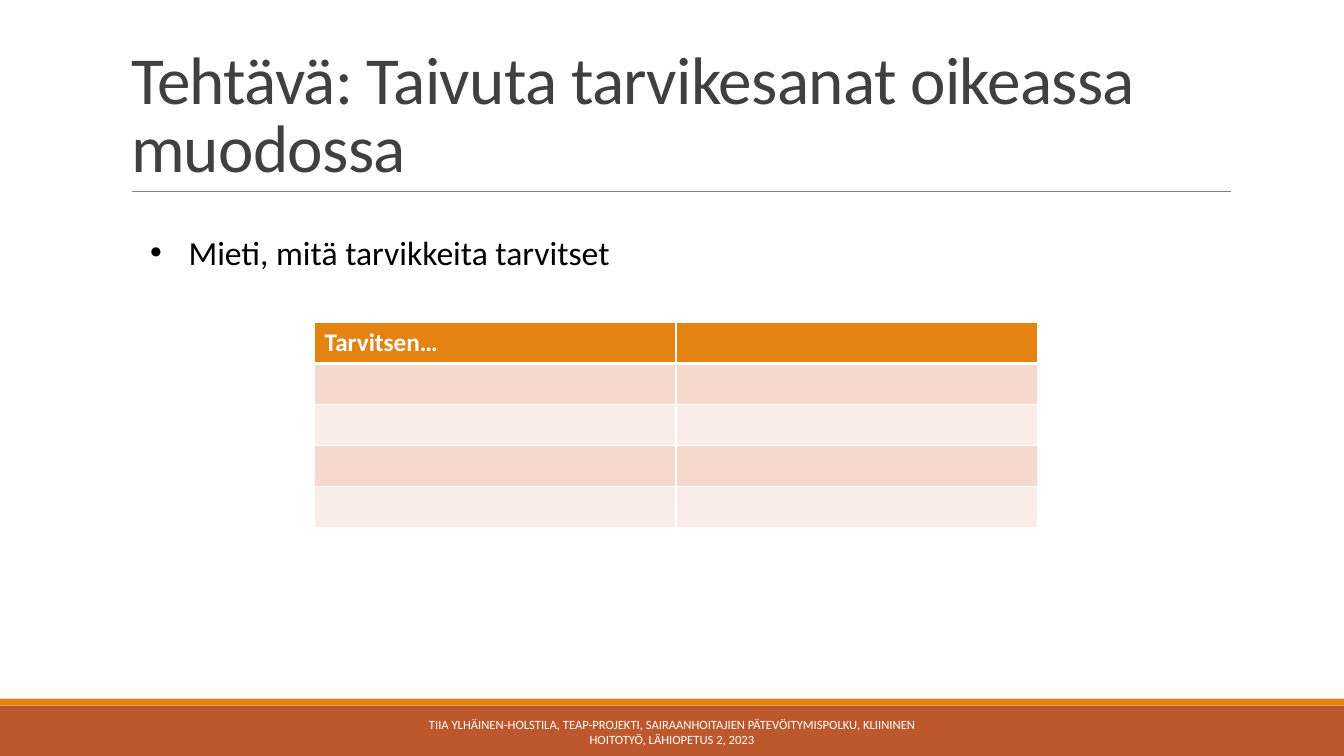
from lxml import etree
from pptx import Presentation
from pptx.dml.color import RGBColor
from pptx.enum import shapes, text
from pptx.oxml import ns
from pptx import util as u

WIDTH, HEIGHT = u.Inches(13.33), u.Inches(7.5)
FONT = "Calibri"
COLORS = {
    "title": "404040",
    "text": "000000",
    "white": "FFFFFF",
    "rule": "808080",
    "accent": "E48312",
    "footer": "BD582C",
    "odd": "F5D9CC",
    "even": "FAEDE7",
}


def rgb(name):
    return RGBColor.from_string(COLORS[name])


def area(x, y, w, h):
    return [int(share * side / 100) for share, side in
            ((x, WIDTH), (y, HEIGHT), (w, WIDTH), (h, HEIGHT))]


def sub(parent, tag, **attrs):
    return etree.SubElement(parent, ns.qn(tag), attrs)


def place(sp, box):
    sp.left, sp.top, sp.width, sp.height = box


def add_run(p, words, size, color, bold=False):
    r = p.add_run()
    r.text = words
    r.font.name = FONT
    r.font.size = u.Pt(size)
    r.font.bold = bold
    r.font.color.rgb = rgb(color)
    return r


def add_bar(s, box, color):
    sp = s.shapes.add_shape(shapes.MSO_SHAPE.RECTANGLE, *box)
    sp.shadow.inherit = False
    sp.fill.solid()
    sp.fill.fore_color.rgb = rgb(color)
    sp.line.fill.background()


def add_rule(s, box):
    x, y, w, h = box
    line = s.shapes.add_connector(shapes.MSO_CONNECTOR.STRAIGHT, x, y, x + w, y + h)
    line.line.color.rgb = rgb("rule")
    line.line.width = u.Pt(0.5)
    sub(line._element.spPr, "a:effectLst")


def fill_title(sp, box, words):
    place(sp, box)
    tf = sp.text_frame
    tf.auto_size = text.MSO_AUTO_SIZE.NONE
    tf.vertical_anchor = text.MSO_ANCHOR.BOTTOM
    p = tf.paragraphs[0]
    p.alignment = text.PP_ALIGN.LEFT
    p.line_spacing = 0.85
    r = add_run(p, words, 48, "title")
    r.font._element.set("spc", "-50")


def fill_list(sp, box, items):
    place(sp, box)
    tf = sp.text_frame
    tf.auto_size = text.MSO_AUTO_SIZE.NONE
    for i, item in enumerate(items):
        p = tf.add_paragraph() if i else tf.paragraphs[0]
        p.space_before, p.space_after = u.Pt(0), u.Pt(12)
        pPr = p._p.get_or_add_pPr()
        indent = u.Inches(0.38)
        pPr.set("marL", str(indent))
        pPr.set("indent", str(-indent))
        sub(pPr, "a:buFont", typeface="Arial")
        sub(pPr, "a:buChar", char="•")
        add_run(p, item, 24, "text")


def add_footer(s, box, words):
    tf = s.shapes.add_textbox(*box).text_frame
    tf.word_wrap = True
    tf.vertical_anchor = text.MSO_ANCHOR.MIDDLE
    p = tf.paragraphs[0]
    p.alignment = text.PP_ALIGN.CENTER
    add_run(p, words, 9, "white")


def border(cell, side, points):
    ln = sub(cell._tc.get_or_add_tcPr(), f"a:ln{side}", w=str(u.Pt(points)))
    sub(sub(ln, "a:solidFill"), "a:srgbClr", val=COLORS["white"])


def add_grid(s, box, rows, cols, heading):
    table = s.shapes.add_table(rows, cols, *box).table
    for i in range(rows):
        color = "accent" if i == 0 else "odd" if i % 2 else "even"
        for j in range(cols):
            cell = table.cell(i, j)
            for side in "LRTB":
                heavy = (i, side) in ((0, "B"), (1, "T"))
                border(cell, side, 3 if heavy else 1)
            cell.fill.solid()
            cell.fill.fore_color.rgb = rgb(color)
    add_run(table.cell(0, 0).text_frame.paragraphs[0], heading, 18, "white", True)


def main():
    prs = Presentation()
    prs.slide_width, prs.slide_height = WIDTH, HEIGHT
    s = prs.slides.add_slide(prs.slide_layouts[1])
    add_bar(s, area(0, 93.33, 100, 6.67), "footer")
    add_bar(s, area(0, 92.4, 100, 0.93), "accent")
    add_rule(s, area(9.83, 25.33, 81.77, 0))
    fill_title(s.shapes.title, area(9, 4.13, 82.52, 21.2),
               "Tehtävä: Taivuta tarvikesanat oikeassa muodossa")
    fill_list(s.placeholders[1], area(10.43, 30, 69.69, 6.67),
              ["Mieti, mitä tarvikkeita tarvitset"])
    add_footer(s, area(30.23, 94.13, 39.53, 5.33),
               "TIIA YLHÄINEN-HOLSTILA, TEAP-PROJEKTI, SAIRAANHOITAJIEN "
               "PÄTEVÖITYMISPOLKU, KLIININEN HOITOTYÖ, LÄHIOPETUS 2, 2023")
    add_grid(s, area(23.41, 42.67, 53.79, 27.07), 5, 2, "Tarvitsen…")
    prs.save("out.pptx")


if __name__ == "__main__":
    main()
